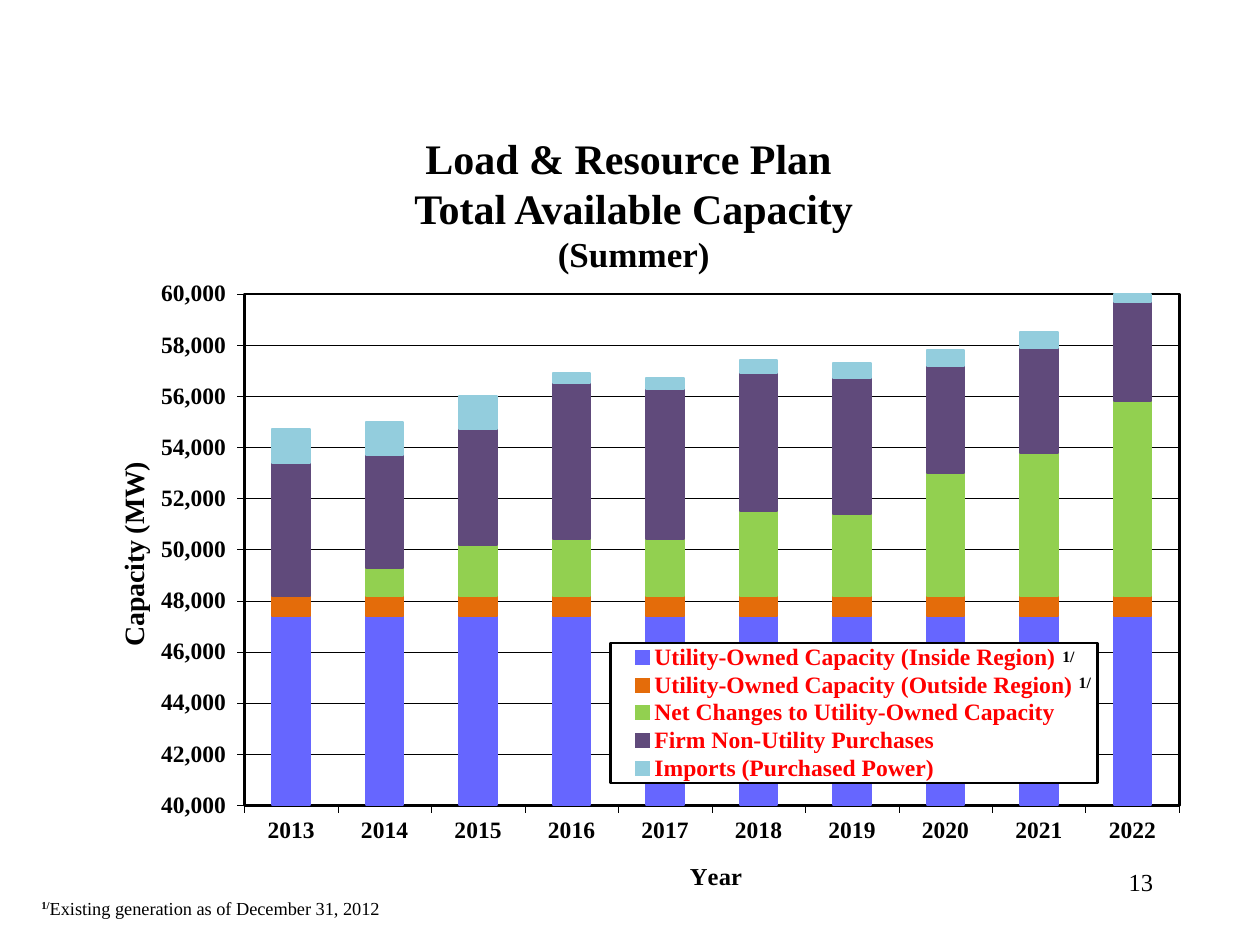
import pptx
import pptx.chart.data
import pptx.dml.color
import pptx.enum.chart
import pptx.enum.text
import pptx.oxml
import pptx.oxml.ns
import pptx.util
from pptx.util import Pt

FONT = "Times New Roman"
BLACK = "000000"
LEGEND_RED = "FF0000"
ALIGN = pptx.enum.text.PP_ALIGN

YEARS = [str(year) for year in range(2013, 2023)]
SERIES = [
    ("Utility-Owned Capacity (Inside Region)", "6666FF", [47400] * 10),
    ("Utility-Owned Capacity (Outside Region)", "E46C0A", [800] * 10),
    ("Net Changes to Utility-Owned Capacity", "92D050",
     [0, 1100, 2000, 2200, 2200, 3300, 3200, 4800, 5600, 7600]),
    ("Firm Non-Utility Purchases", "604A7B",
     [5200, 4400, 4500, 6100, 5900, 5400, 5300, 4200, 4100, 3900]),
    ("Imports (Purchased Power)", "93CDDD",
     [1300, 1300, 1300, 400, 400, 500, 600, 600, 600, 600]),
]


def color(hex_text):
    return pptx.dml.color.RGBColor.from_string(hex_text)


def style_font(font, size, hex_text=BLACK, bold=True):
    font.name = FONT
    font.size = Pt(size)
    font.bold = bold
    font.color.rgb = color(hex_text)


def style_line(line, width, hex_text=BLACK):
    line.color.rgb = color(hex_text)
    line.width = Pt(width)


def add_run(para, text, size, bold=True):
    run = para.add_run()
    run.text = text
    style_font(run.font, size, bold=bold)
    return run


def add_box(slide, left, top, width, height, align=ALIGN.LEFT):
    """Add a wrapping text box and return its first paragraph."""
    box = slide.shapes.add_textbox(Pt(left), Pt(top), Pt(width), Pt(height))
    box.text_frame.word_wrap = True
    para = box.text_frame.paragraphs[0]
    para.alignment = align
    return para


def add_title(slide):
    title = slide.shapes.title
    title.left, title.top = Pt(22.32), Pt(75.6)
    title.width, title.height = Pt(679.68), Pt(81.36)
    frame = title.text_frame
    frame.auto_size = pptx.enum.text.MSO_AUTO_SIZE.NONE
    frame.vertical_anchor = pptx.enum.text.MSO_ANCHOR.MIDDLE
    para = frame.paragraphs[0]
    para.alignment = ALIGN.CENTER
    for text in ("Load & Resource Plan ", "Total Available Capacity"):
        add_run(para, text, 24)
        para.add_line_break()
    add_run(para, "(Summer)", 20)


def place(element, x, y, width=None, height=None, inner=False):
    """Give a chart part a manual layout, in fractions of the chart."""
    for old in element.findall(pptx.oxml.ns.qn("c:layout")):
        element.remove(old)
    target = '<c:layoutTarget val="inner"/>' if inner else ""
    modes = '<c:xMode val="edge"/><c:yMode val="edge"/>'
    sizes = f'<c:x val="{x}"/><c:y val="{y}"/>'
    if width:
        sizes += f'<c:w val="{width}"/><c:h val="{height}"/>'
    layout = pptx.oxml.parse_xml(
        f'<c:layout {pptx.oxml.ns.nsdecls("c")}><c:manualLayout>'
        f"{target}{modes}{sizes}</c:manualLayout></c:layout>")
    leading = [element.find(pptx.oxml.ns.qn(tag)) for tag in ("c:tx", "c:legendPos")]
    element.insert(sum(part is not None for part in leading), layout)


def frame_properties(fill):
    """Shape properties with a black outline around the given fill XML."""
    return pptx.oxml.parse_xml(
        f'<c:spPr {pptx.oxml.ns.nsdecls("c", "a")}>{fill}<a:ln w="19050">'
        f'<a:solidFill><a:srgbClr val="{BLACK}"/></a:solidFill></a:ln></c:spPr>')


def style_axis(axis, title, title_size, title_x, title_y):
    add_run(axis.axis_title.text_frame.paragraphs[0], title, title_size)
    place(axis.axis_title._element, title_x, title_y)
    axis.major_tick_mark = pptx.enum.chart.XL_TICK_MARK.OUTSIDE
    axis.minor_tick_mark = pptx.enum.chart.XL_TICK_MARK.NONE
    style_font(axis.tick_labels.font, 13.4)
    style_line(axis.format.line, 0.28)


def style_legend(chart):
    chart.has_legend = True
    legend = chart.legend
    legend.position = pptx.enum.chart.XL_LEGEND_POSITION.BOTTOM
    legend.include_in_layout = False
    style_font(legend.font, 13.5, LEGEND_RED)
    place(legend._element, 0.477, 0.596, 0.441, 0.223)
    white = '<a:solidFill><a:srgbClr val="FFFFFF"/></a:solidFill>'
    text_properties = legend._element.find(pptx.oxml.ns.qn("c:txPr"))
    text_properties.addprevious(frame_properties(white))


def add_capacity_chart(slide):
    data = pptx.chart.data.CategoryChartData()
    data.categories = YEARS
    for name, _, values in SERIES:
        data.add_series(name, values)
    chart = slide.shapes.add_chart(
        pptx.enum.chart.XL_CHART_TYPE.COLUMN_STACKED,
        Pt(47.52), Pt(154.08), Pt(631.44), Pt(359.28), data).chart
    chart.has_title = False
    style_font(chart.font, 21.5)

    plot = chart.plots[0]
    plot.gap_width, plot.overlap = 150, 100
    plot.vary_by_categories = False
    for series, (_, hex_text, _) in zip(plot.series, SERIES):
        series.format.fill.solid()
        series.format.fill.fore_color.rgb = color(hex_text)
        style_line(series.format.line, 1.12, hex_text)

    style_axis(chart.category_axis, "Year", 14, 0.545, 0.936)
    chart.category_axis.tick_label_position = pptx.enum.chart.XL_TICK_LABEL_POSITION.LOW
    axis = chart.value_axis
    style_axis(axis, "Capacity (MW)", 16, 0.025, 0.3)
    axis.minimum_scale, axis.maximum_scale, axis.major_unit = 40000, 60000, 2000
    axis.tick_labels.number_format = r"#,##0_);[Red]\(#,##0\)"
    axis.tick_labels.number_format_is_linked = False
    axis.has_major_gridlines = True
    style_line(axis.major_gridlines.format.line, 0.28)

    style_legend(chart)
    plot_area = chart._chartSpace.chart.plotArea
    place(plot_area, 0.146, 0.039, 0.846, 0.816, inner=True)
    plot_area.append(frame_properties("<a:noFill/>"))


def main():
    deck = pptx.Presentation()
    deck.slide_width, deck.slide_height = Pt(720), Pt(540)
    slide = deck.slides.add_slide(deck.slide_layouts[5])
    add_title(slide)
    add_capacity_chart(slide)

    page_number = add_box(slide, 516.24, 491.76, 149.76, 36, ALIGN.RIGHT)
    add_run(page_number, "13", 14, bold=False)

    footnote = add_box(slide, 16.56, 509.04, 238.32, 20.16)
    mark = add_run(footnote, "1/", 10.5)
    mark.font._element.set("baseline", "30000")
    add_run(footnote, "Existing generation as of December 31, 2012", 10.5, bold=False)

    for left, top in ((599.04, 365.76), (608.4, 380.88)):
        legend_mark = add_box(slide, left, top, 23.04, 18, ALIGN.CENTER)
        add_run(legend_mark, "1/", 9)
    deck.save("out.pptx")


if __name__ == "__main__":
    main()
